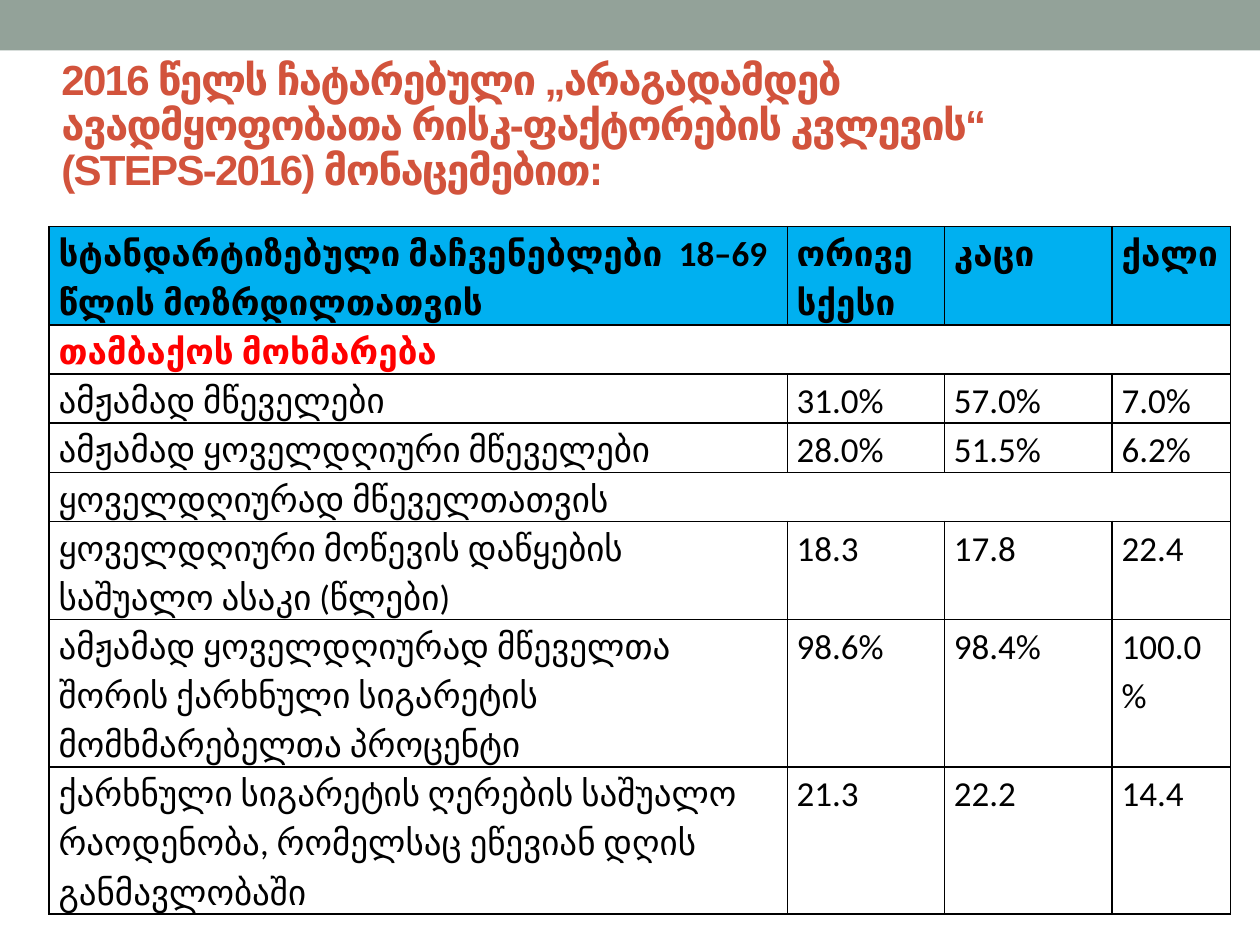
from dataclasses import dataclass

from lxml.etree import SubElement
from pptx import Presentation
from pptx.dml.color import RGBColor
from pptx.enum.shapes import MSO_SHAPE
from pptx.enum.text import MSO_ANCHOR
from pptx.oxml.ns import qn
from pptx.util import Cm, Pt


@dataclass(frozen=True)
class Theme:
    band: str = "93A299"
    heading: str = "D2533C"
    header_fill: str = "00B0F0"
    section: str = "FF0000"
    ink: str = "000000"
    heading_font: str = "Arial"
    body_font: str = "Calibri"
    heading_size: int = 24
    body_size: int = 20
    border_width: int = 1


HEADING = "2016 წელს ჩატარებული „არაგადამდებ ავადმყოფობათა რისკ-ფაქტორების კვლევის“ (STEPS-2016) მონაცემებით:"

# Each row: number of text lines in its first cell, then the cell texts
INDICATORS = [
    (2, "სტანდარტიზებული მაჩვენებლები  18–69 წლის მოზრდილთათვის", "ორივე სქესი", "კაცი", "ქალი"),
    (1, "თამბაქოს მოხმარება"),
    (1, "ამჟამად მწეველები", "31.0%", "57.0%", "7.0%"),
    (1, "ამჟამად ყოველდღიური მწეველები", "28.0%", "51.5%", "6.2%"),
    (1, "ყოველდღიურად მწეველთათვის"),
    (2, "ყოველდღიური მოწევის დაწყების საშუალო ასაკი (წლები)", "18.3", "17.8", "22.4"),
    (3, "ამჟამად ყოველდღიურად მწეველთა შორის ქარხნული სიგარეტის მომხმარებელთა პროცენტი",
     "98.6%", "98.4%", "100.0%"),
    (3, "ქარხნული სიგარეტის ღერების საშუალო რაოდენობა, რომელსაც ეწევიან დღის განმავლობაში",
     "21.3", "22.2", "14.4"),
]
COLUMN_WIDTHS = [14.88, 3.17, 3.38, 2.39]
LINE_HEIGHT = 0.99


def apply_format(target, values):
    for name, value in values.items():
        setattr(target, name, value)


class SlideBuilder:
    def __init__(self, slide, theme):
        self.slide = slide
        self.theme = theme

    def add_text(self, frame, text, color, font, size, bold, spacing):
        paragraph = frame.paragraphs[0]
        paragraph.line_spacing = spacing
        run = paragraph.add_run()
        run.text = text
        apply_format(run.font, {"name": font, "size": Pt(size), "bold": bold})
        run.font.color.rgb = RGBColor.from_string(color)
        return run

    def band(self, left, top, width, height):
        strip = self.slide.shapes.add_shape(
            MSO_SHAPE.RECTANGLE, Cm(left), Cm(top), Cm(width), Cm(height))
        strip.shadow.inherit = False
        strip.fill.solid()
        strip.fill.fore_color.rgb = RGBColor.from_string(self.theme.band)
        strip.line.fill.background()

    def heading(self, text, left, top, width, height):
        frame = self.slide.shapes.add_textbox(
            Cm(left), Cm(top), Cm(width), Cm(height)).text_frame
        apply_format(frame, {"word_wrap": True, "vertical_anchor": MSO_ANCHOR.MIDDLE})
        run = self.add_text(frame, text, self.theme.heading, self.theme.heading_font,
                            self.theme.heading_size, True, 0.9)
        run._r.get_or_add_rPr().set("spc", "-100")

    def borders(self, cell):
        properties = cell._tc.get_or_add_tcPr()
        for position, side in enumerate(("lnL", "lnR", "lnT", "lnB")):
            edge = SubElement(properties, qn(f"a:{side}"), w=str(int(Pt(self.theme.border_width))))
            fill = SubElement(edge, qn("a:solidFill"))
            SubElement(fill, qn("a:srgbClr"), val=self.theme.ink)
            properties.insert(position, edge)

    def table(self, rows, widths, left, top):
        heights = [lines * LINE_HEIGHT for lines, *_ in rows]
        grid = self.slide.shapes.add_table(
            len(rows), len(widths), Cm(left), Cm(top), Cm(sum(widths)), Cm(sum(heights))).table
        apply_format(grid, {"first_row": False, "horz_banding": False})
        for column, width in zip(grid.columns, widths):
            column.width = Cm(width)

        for index, (_, *texts) in enumerate(rows):
            grid.rows[index].height = Cm(heights[index])
            is_header, is_section = index == 0, index == 1
            for cell in grid.rows[index].cells:
                apply_format(cell, {"margin_left": Cm(0.19), "margin_right": Cm(0.19),
                                    "margin_top": 0, "margin_bottom": 0})
                if is_header:
                    cell.fill.solid()
                    cell.fill.fore_color.rgb = RGBColor.from_string(self.theme.header_fill)
                else:
                    cell.fill.background()
                self.borders(cell)
            # A row with a single text spans the whole table
            if len(texts) == 1:
                grid.cell(index, 0).merge(grid.cell(index, len(widths) - 1))
            color = self.theme.section if is_section else self.theme.ink
            for column, text in enumerate(texts):
                self.add_text(grid.cell(index, column).text_frame, text, color,
                              self.theme.body_font, self.theme.body_size,
                              is_header or is_section, 1.15)


def main():
    deck = Presentation()
    apply_format(deck, {"slide_width": Cm(25.4), "slide_height": Cm(19.05)})
    builder = SlideBuilder(deck.slides.add_slide(deck.slide_layouts[6]), Theme())

    # Top band and heading
    builder.band(0, 0, 25.4, 1.02)
    builder.heading(HEADING, 0.99, 1.19, 22.86, 2.74)

    # Tobacco use indicators
    builder.table(INDICATORS, COLUMN_WIDTHS, 0.99, 4.57)

    deck.save("out.pptx")


if __name__ == "__main__":
    main()
